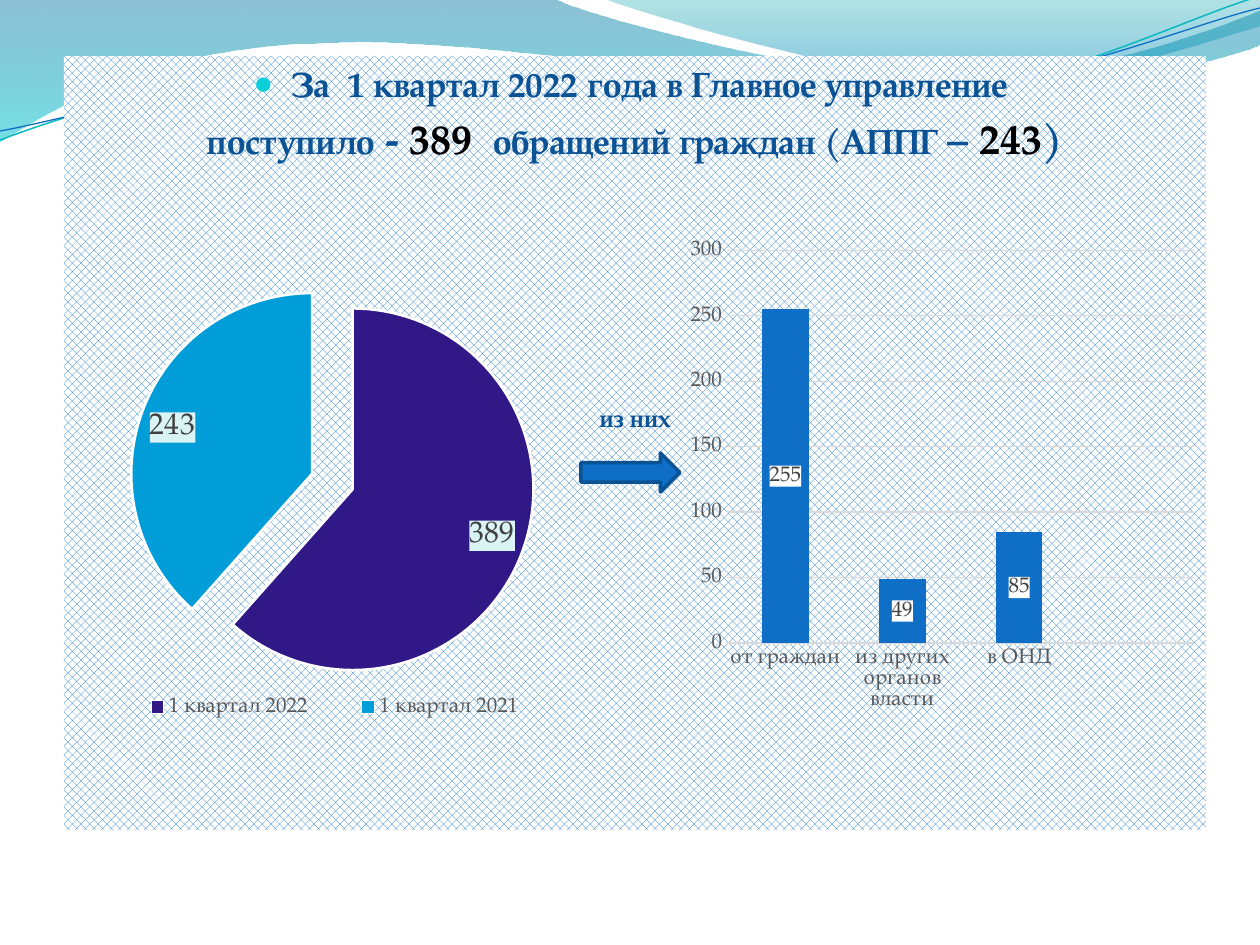
from lxml.etree import SubElement
from pptx import Presentation
from pptx.chart.data import CategoryChartData
from pptx.dml.color import RGBColor
from pptx.enum.chart import XL_CHART_TYPE, XL_LABEL_POSITION, XL_LEGEND_POSITION, XL_TICK_MARK
from pptx.enum.dml import MSO_PATTERN
from pptx.enum.shapes import MSO_SHAPE
from pptx.enum.text import MSO_AUTO_SIZE, PP_ALIGN
from pptx.oxml.ns import qn
from pptx.util import Pt

PX = 914400 / 126
FONT = "TeX Gyre Pagella"
COLORS = {
    "navy": "0B5394", "black": "000000", "white": "FFFFFF", "blue": "0F6FC6",
    "edge": "0B5292", "bullet": "0BD0D9", "violet": "301887", "sky": "009DD9",
    "mint": "DAF4F5", "axis": "595959", "label": "404040", "grid": "D9D9D9",
    "deep": "0074A1", "aqua": "00C6CF", "teal": "00A1A9", "sea": "008BBF",
    "curl": "0AB8BF",
}

PARAGRAPHS = [
    [("За  1 квартал 2022 года в Главное управление ", 20, "navy")],
    [("поступило", 20, "navy"), (" - ", 24, "navy"), ("389  ", 24, "black"),
     ("обращений граждан (АППГ ", 20, "navy"), ("– ", 24, "navy"),
     ("243", 24, "black"), (")", 24, "navy")],
    [("из них", 14, "navy")],
]
SPACE_ABOVE_LAST = 137
BODY = (64, 56, 1142, 774)
ARROW = (581, 453, 99, 39)

PIE = {"box": (84, 255, 507, 476), "type": XL_CHART_TYPE.PIE,
       "cats": ["1 квартал 2022", "1 квартал 2021"], "values": [389, 243]}
PIE_COLORS = ["violet", "sky"]
PIE_PLOT = {"layoutTarget": "inner", "xMode": "edge", "yMode": "edge",
            "x": 0, "y": 0.08, "w": 0.9, "h": 0.76}
PIE_LEGEND = {"xMode": "edge", "yMode": "edge", "x": 0.04, "y": 0.91, "w": 0.91, "h": 0.08}
COLUMNS = {"box": (680, 230, 525, 491), "type": XL_CHART_TYPE.COLUMN_STACKED,
           "cats": ["от граждан", "из других органов власти", "в ОНД"],
           "values": [255, 49, 85, None]}

WAVES = [
    {"start": (0, 0), "fill": [(0, "deep", 45), (1, "aqua", 55)], "segments": [
        [(554, -1)], [(600, 21), (837, 79), (955, 79)],
        [(1075, 79), (1207, 33), (1260, 11)], [(1261, 45)],
        [(1238, 55), (1096, 96), (940, 94)], [(784, 94), (481, 35), (324, 43)],
        [(163, 45), (58, 105), (-1, 142)]]},
    {"start": (604, -1), "fill": [(0, "teal", 30), (0.8, "sea", 45)], "segments": [
        [(641, 14), (859, 78), (969, 82)], [(1079, 87), (1211, 40), (1260, 26)],
        [(1260, 0)]]},
    {"start": (0, 140), "line": ("curl", 0.85), "segments": [
        [(60, 117), (199, 72), (349, 66)], [(498, 59), (747, 112), (898, 101)],
        [(1050, 89), (1182, 19), (1257, -3)]]},
    {"start": (0, 131), "line": ("blue", 0.75), "segments": [
        [(59, 121), (207, 77), (357, 71)], [(508, 64), (752, 106), (903, 94)],
        [(1053, 84), (1186, 26), (1260, 8)]]},
]


def px(*lengths):
    return [round(n * PX) for n in lengths]


def rgb(name):
    return RGBColor.from_string(COLORS[name])


def paint(fill, name):
    fill.solid()
    fill.fore_color.rgb = rgb(name)


def stroke(line, name, width):
    paint(line.fill, name)
    line.width = Pt(width)


def style(font, size, color, bold=False):
    for key, value in {"name": FONT, "size": Pt(size), "bold": bold}.items():
        setattr(font, key, value)
    font.color.rgb = rgb(color)


def bend(sp, segments):
    lines = iter(list(sp._element.iter(qn("a:lnTo"))))
    for segment in segments:
        nodes = [next(lines) for _ in segment]
        if len(nodes) == 3:
            bezier = nodes[0].makeelement(qn("a:cubicBezTo"))
            nodes[0].addprevious(bezier)
            for node in nodes:
                bezier.append(node[0])
                node.getparent().remove(node)


def add_wave(s, wave):
    builder = s.shapes.build_freeform(*px(*wave["start"]))
    points = [px(*point) for segment in wave["segments"] for point in segment]
    builder.add_line_segments(points, close="fill" in wave)
    sp = builder.convert_to_shape()
    bend(sp, wave["segments"])
    sp.shadow.inherit = False
    if "line" in wave:
        sp.fill.background()
        stroke(sp.line, *wave["line"])
        return
    sp.line.fill.background()
    sp.fill.gradient()
    sp.fill.gradient_angle = 270
    for stop, (position, color, _) in zip(sp.fill.gradient_stops, wave["fill"]):
        stop.position = position
        stop.color.rgb = rgb(color)
    for node, (_, _, alpha) in zip(sp._element.iter(qn("a:srgbClr")), wave["fill"]):
        SubElement(node, qn("a:alpha"), val=str(alpha * 1000))


def fill_body(sp):
    sp.left, sp.top, sp.width, sp.height = px(*BODY)
    sp.fill.patterned()
    sp.fill.pattern = MSO_PATTERN.PERCENT_50
    sp.fill.fore_color.rgb = rgb("blue")
    sp.fill.back_color.rgb = rgb("white")
    tf = sp.text_frame
    tf.auto_size = MSO_AUTO_SIZE.NONE
    for i, runs in enumerate(PARAGRAPHS):
        p = tf.add_paragraph() if i else tf.paragraphs[0]
        p.alignment = PP_ALIGN.CENTER
        if i == len(PARAGRAPHS) - 1:
            p.space_before = Pt(SPACE_ABOVE_LAST)
        for text, size, color in runs:
            r = p.add_run()
            r.text = text
            style(r.font, size, color, True)
        pPr = p._p.get_or_add_pPr()
        margin = 0 if i else px(38)[0]
        pPr.set("marL", str(margin))
        pPr.set("indent", str(-margin))
        if i:
            SubElement(pPr, qn("a:buNone"))
        else:
            SubElement(SubElement(pPr, qn("a:buClr")), qn("a:srgbClr"), val=COLORS["bullet"])
            SubElement(pPr, qn("a:buSzPct"), val="95000")
            SubElement(pPr, qn("a:buChar"), char="●")


def add_chart(s, content):
    data = CategoryChartData()
    data.categories = content["cats"]
    data.add_series("Series 1", content["values"])
    chart = s.shapes.add_chart(content["type"], *px(*content["box"]), data).chart
    chart.has_title = False
    chart.has_legend = False
    style(chart.font, 10, "black")
    return chart


def add_labels(plot, size, back):
    plot.has_data_labels = True
    labels = plot.data_labels
    labels.show_value = True
    style(labels.font, size, "label")
    spPr = labels._element.makeelement(qn("c:spPr"))
    labels._element.find(qn("c:txPr")).addprevious(spPr)
    SubElement(SubElement(spPr, qn("a:solidFill")), qn("a:srgbClr"), val=COLORS[back])
    return labels


def place(parent, index, values):
    for old in parent.findall(qn("c:layout")):
        parent.remove(old)
    layout = parent.makeelement(qn("c:layout"))
    parent.insert(index, layout)
    manual = SubElement(layout, qn("c:manualLayout"))
    for tag, value in values.items():
        SubElement(manual, qn("c:" + tag), val=str(value))


def add_pie(s):
    chart = add_chart(s, PIE)
    plot = chart.plots[0]
    plot.vary_by_categories = True
    for i, color in enumerate(PIE_COLORS):
        point = plot.series[0].points[i]
        paint(point.format.fill, color)
        stroke(point.format.line, "white", 1.5)
    first = plot.series[0]._element.find(qn("c:dPt"))
    explosion = first.makeelement(qn("c:explosion"), val="24")
    first.find(qn("c:spPr")).addprevious(explosion)
    add_labels(plot, 17, "mint").position = XL_LABEL_POSITION.INSIDE_END
    chart.has_legend = True
    chart.legend.position = XL_LEGEND_POSITION.BOTTOM
    chart.legend.include_in_layout = False
    style(chart.legend.font, 12, "axis")
    place(chart._chartSpace.chart.plotArea, 0, PIE_PLOT)
    place(chart.legend._element, 1, PIE_LEGEND)


def add_columns(s):
    chart = add_chart(s, COLUMNS)
    plot = chart.plots[0]
    for key, value in {"gap_width": 150, "overlap": 100, "vary_by_categories": False}.items():
        setattr(plot, key, value)
    paint(plot.series[0].format.fill, "blue")
    add_labels(plot, 12, "white")
    for axis in (chart.category_axis, chart.value_axis):
        axis.major_tick_mark = axis.minor_tick_mark = XL_TICK_MARK.NONE
        axis.format.line.fill.background()
        style(axis.tick_labels.font, 12, "axis")
    for key, value in {"minimum_scale": 0, "maximum_scale": 300, "major_unit": 50}.items():
        setattr(chart.value_axis, key, value)
    stroke(chart.value_axis.major_gridlines.format.line, "grid", 0.75)


prs = Presentation()
prs.slide_width, prs.slide_height = px(1260, 945)
s = prs.slides.add_slide(prs.slide_layouts[1])
title, body = s.placeholders
title._element.getparent().remove(title._element)
for wave in WAVES:
    add_wave(s, wave)
s.shapes._spTree.append(body._element)
fill_body(body)
add_pie(s)
arrow = s.shapes.add_shape(MSO_SHAPE.RIGHT_ARROW, *px(*ARROW))
arrow.shadow.inherit = False
paint(arrow.fill, "blue")
stroke(arrow.line, "edge", 2)
add_columns(s)
prs.save("out.pptx")
